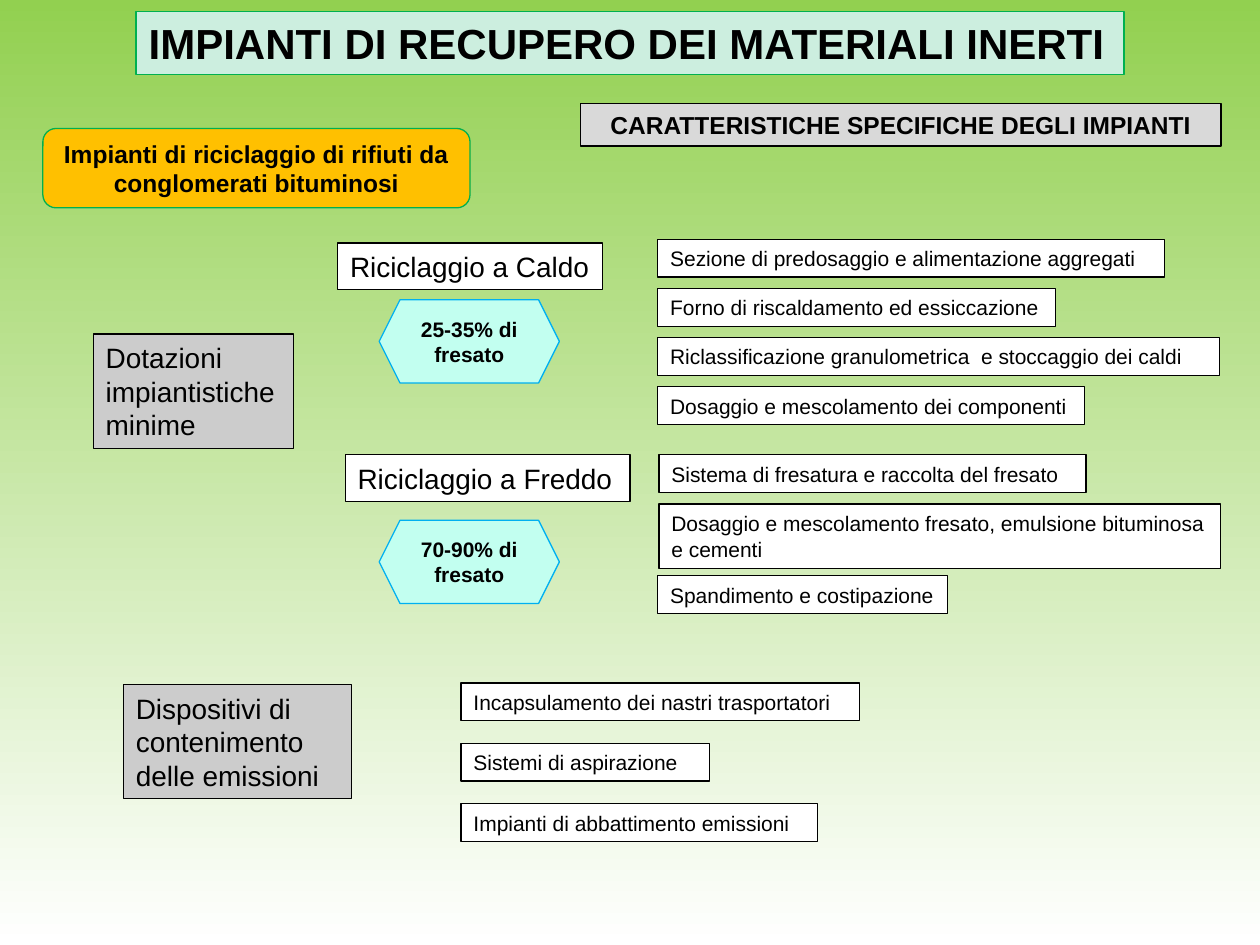
from dataclasses import dataclass

from pptx import Presentation
from pptx.dml.color import RGBColor
from pptx.enum.shapes import MSO_SHAPE
from pptx.enum.text import MSO_ANCHOR, MSO_AUTO_SIZE, PP_ALIGN
from pptx.util import Inches, Pt

RECT = MSO_SHAPE.RECTANGLE
ROUNDED = MSO_SHAPE.ROUNDED_RECTANGLE
HEXAGON = MSO_SHAPE.HEXAGON
LEFT, CENTER = PP_ALIGN.LEFT, PP_ALIGN.CENTER
MIDDLE = MSO_ANCHOR.MIDDLE
NO_AUTOFIT = MSO_AUTO_SIZE.NONE

COLORS = {
    "black": "000000", "white": "FFFFFF", "gray": "CCCCCC",
    "light_gray": "D9D9D9", "orange": "FFC000", "mint": "CCEEDF",
    "aqua": "C2FFF0", "green": "00B050", "blue": "00B0F0", "lime": "92D050",
}
FONT = "Arial"
ROW_HEIGHT = 0.3


@dataclass
class Style:
    fill: str
    line: str = "black"
    size: int = 12
    bold: bool = False
    align: PP_ALIGN = LEFT
    outline: MSO_SHAPE = RECT


@dataclass
class Box:
    text: str
    left: float
    top: float
    width: float
    height: float
    style: Style


TITLE = Style("mint", "green", 24, True)
HEADING = Style("light_gray", size=14, bold=True, align=CENTER)
PLANT_TYPE = Style("orange", "green", 14, True, CENTER, ROUNDED)
CATEGORY = Style("gray", size=16)
PROCESS = Style("white", size=16)
SHARE = Style("aqua", "blue", 12, True, CENTER, HEXAGON)
ITEM = Style("white")


def item_column(left: float, top: float, step: float,
                items: list[tuple[str, float]]) -> list[Box]:
    """Stack one-line items, given as (text, width), at an equal pitch."""
    return [Box(text, left, top + i * step, width, ROW_HEIGHT, ITEM)
            for i, (text, width) in enumerate(items)]


BOXES = [
    Box("CARATTERISTICHE SPECIFICHE DEGLI IMPIANTI", 4.61, 0.82, 5.08, 0.34, HEADING),
    Box("Impianti di riciclaggio di rifiuti da conglomerati bituminosi",
        0.34, 1.02, 3.39, 0.63, PLANT_TYPE),
    Box("Dotazioni impiantistiche minime", 0.74, 2.65, 1.59, 0.91, CATEGORY),
    Box("Riciclaggio a Caldo", 2.68, 1.93, 2.1, 0.37, PROCESS),
    Box("25-35% di fresato", 3.01, 2.38, 1.43, 0.66, SHARE),
    *item_column(5.22, 1.9, 0.39, [
        ("Sezione di predosaggio e alimentazione aggregati", 4.02),
        ("Forno di riscaldamento ed essiccazione", 3.16),
        ("Riclassificazione granulometrica  e stoccaggio dei caldi", 4.46),
        ("Dosaggio e mescolamento dei componenti", 3.39),
    ]),
    Box("Riciclaggio a Freddo", 2.74, 3.61, 2.26, 0.37, PROCESS),
    Box("70-90% di fresato", 3.01, 4.13, 1.43, 0.66, SHARE),
    Box("Sistema di fresatura e raccolta del fresato", 5.23, 3.61, 3.39, ROW_HEIGHT, ITEM),
    Box("Dosaggio e mescolamento fresato, emulsione bituminosa e cementi",
        5.23, 4, 4.46, 0.51, ITEM),
    Box("Spandimento e costipazione", 5.22, 4.57, 2.3, ROW_HEIGHT, ITEM),
    Box("Dispositivi di contenimento delle emissioni", 0.98, 5.43, 1.81, 0.91, CATEGORY),
    *item_column(3.66, 5.42, 0.48, [
        ("Incapsulamento dei nastri trasportatori", 3.16),
        ("Sistemi di aspirazione", 1.97),
        ("Impianti di abbattimento emissioni", 2.83),
    ]),
]
TITLE_BOX = Box("IMPIANTI DI RECUPERO DEI MATERIALI INERTI", 1.08, 0.09, 7.84, 0.5, TITLE)


def rgb(name: str) -> RGBColor:
    return RGBColor.from_string(COLORS[name])


def format_box(shape, box: Box) -> None:
    style = box.style
    shape.fill.solid()
    shape.fill.fore_color.rgb = rgb(style.fill)
    shape.line.color.rgb = rgb(style.line)
    shape.line.width = Pt(0.75)
    frame = shape.text_frame
    frame.text = box.text
    frame.word_wrap = True
    frame.auto_size = NO_AUTOFIT
    frame.vertical_anchor = MIDDLE
    paragraph = frame.paragraphs[0]
    paragraph.alignment = style.align
    font = paragraph.font
    font.name = FONT
    font.size = Pt(style.size)
    font.bold = style.bold
    font.color.rgb = rgb("black")


def add_box(slide, box: Box) -> None:
    shape = slide.shapes.add_shape(
        box.style.outline, Inches(box.left), Inches(box.top),
        Inches(box.width), Inches(box.height))
    shape.shadow.inherit = False
    format_box(shape, box)


def set_title(slide, box: Box) -> None:
    title = slide.shapes.title
    title.left, title.top = Inches(box.left), Inches(box.top)
    title.width, title.height = Inches(box.width), Inches(box.height)
    format_box(title, box)


def set_background(slide) -> None:
    fill = slide.background.fill
    fill.gradient()
    fill.gradient_angle = 270
    for stop, color in zip(fill.gradient_stops, ("lime", "white")):
        stop.color.rgb = rgb(color)


def main() -> None:
    presentation = Presentation()
    presentation.slide_width = Inches(10)
    presentation.slide_height = Inches(7.5)
    slide = presentation.slides.add_slide(presentation.slide_layouts[5])
    set_background(slide)
    set_title(slide, TITLE_BOX)
    for box in BOXES:
        add_box(slide, box)
    presentation.save("out.pptx")


if __name__ == "__main__":
    main()
